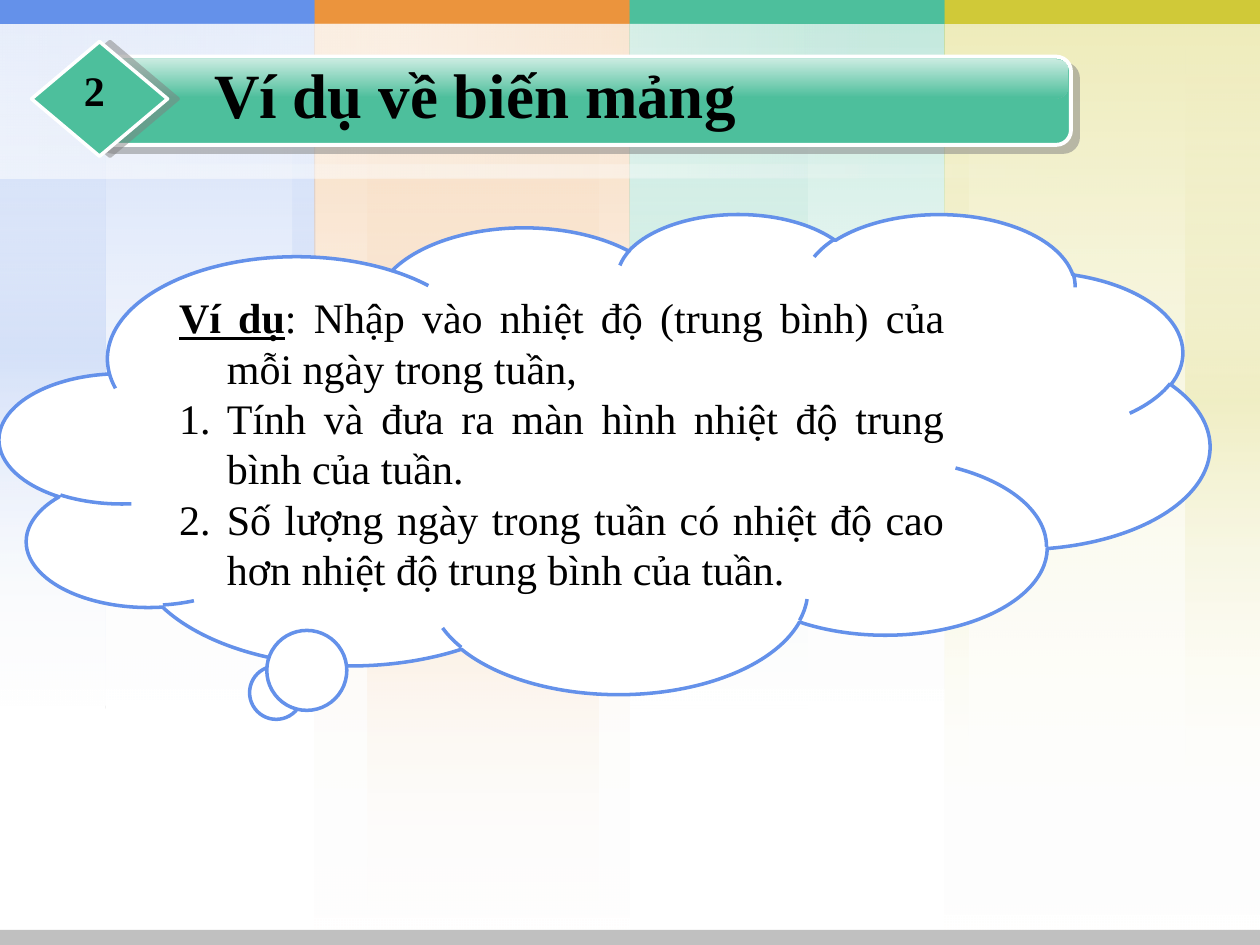
from lxml import etree
from pptx import Presentation
from pptx import util as u
from pptx.dml.color import RGBColor
from pptx.enum import shapes, text
from pptx.oxml import parse_xml
from pptx.oxml.ns import nsdecls, qn

WIDTH, HEIGHT = 10, 7.5
COLUMN = WIDTH / 4
FONT = "Times New Roman"
BLUE = RGBColor(0x64, 0x91, 0xEA)
ORANGE = RGBColor(0xEB, 0x94, 0x3D)
GREEN = RGBColor(0x4D, 0xBF, 0x9C)
YELLOW = RGBColor(0xD0, 0xC9, 0x38)
WHITE = RGBColor(0xFF, 0xFF, 0xFF)
BLACK = RGBColor(0, 0, 0)
SILVER = RGBColor(0xC0, 0xC0, 0xC0)
GREY = RGBColor(0x80, 0x80, 0x80)
SHAPE = shapes.MSO_SHAPE

# colour, panel height, strip height, strips as (offset in column, width)
COLUMNS = [
    (BLUE, 5.62, 5.62, [(2.32, 0.18), (0, 0.84)]),
    (ORANGE, 7.5, 7.5, [(0.42, 1.83)]),
    (GREEN, 5.62, 5.62, [(0, 1.41)]),
    (YELLOW, 7.47, 6.37, [(0, 0.19), (1.91, 0.59)]),
]
TASKS = [
    "Tính và đưa ra màn hình nhiệt độ trung bình của tuần.",
    "Số lượng ngày trong tuần có nhiệt độ cao hơn nhiệt độ trung bình của tuần.",
]


def inches(*values):
    return [u.Inches(value) for value in values]


def add_shape(page, kind, place, fill=None, line=None, line_width=2):
    shape = page.shapes.add_shape(kind, *inches(*place))
    shape.shadow.inherit = False
    if fill is not None:
        shape.fill.solid()
        shape.fill.fore_color.rgb = fill
    if line is None:
        shape.line.fill.background()
    else:
        shape.line.color.rgb = line
        shape.line.width = u.Pt(line_width)
    return shape


def set_gradient(shape, stops):
    """Fill from top to bottom; each stop is (position, colour, opacity) in percent."""
    marks = "".join(
        f'<a:gs pos="{position * 1000}"><a:srgbClr val="{colour}">'
        f'<a:alpha val="{opacity * 1000}"/></a:srgbClr></a:gs>'
        for position, colour, opacity in stops)
    gradient = parse_xml(
        f'<a:gradFill {nsdecls("a")} rotWithShape="1"><a:gsLst>{marks}</a:gsLst>'
        '<a:lin ang="5400000" scaled="0"/></a:gradFill>')
    shape._element.spPr.find(qn("a:prstGeom")).addnext(gradient)


def add_fade(page, place, colour, opacity, strip=False, rotation=0):
    """Add a panel that fades out downwards, or a strip that is strongest halfway."""
    panel = add_shape(page, SHAPE.RECTANGLE, place)
    panel.rotation = rotation
    if strip:
        stops = [(0, WHITE, 0), (50, colour, opacity), (100, WHITE, 0)]
    else:
        stops = [(0, colour, opacity), (100, WHITE, 0)]
    set_gradient(panel, stops)


def fill_shadow(effects, colour, distance, angle):
    shadow = etree.SubElement(effects, qn("a:outerShdw"), dist=str(u.Pt(distance)),
                              dir=str(angle * 60000), algn="ctr", rotWithShape="0")
    tint = etree.SubElement(shadow, qn("a:srgbClr"), val=str(colour))
    etree.SubElement(tint, qn("a:alpha"), val="50000")


def set_shadow(shape, distance, angle):
    fill_shadow(shape._element.spPr.find(qn("a:effectLst")), GREY, distance, angle)


def add_span(para, wording, size, bold=False, underline=False):
    span = para.add_run()
    span.text = wording
    font = span.font
    font.name, font.size, font.bold, font.underline = FONT, u.Pt(size), bold, underline
    font.color.rgb = BLACK
    return span


def add_background(page):
    for index, (colour, height, strip_height, strips) in enumerate(COLUMNS):
        left = index * COLUMN
        panel = (left, 0, COLUMN, height)
        add_fade(page, panel, colour, 20)
        for offset, width in strips:
            add_fade(page, (left + offset, 0, width, strip_height), colour, 20, strip=True)
        add_fade(page, panel, colour, 20)
        add_shape(page, SHAPE.RECTANGLE, (left, 0, COLUMN, 0.19), colour)
    glow = (3.15, -2.95, 1.22, 7.51)
    for place, strip in [((4.16, -2.85, 0.1, 8.42), True), (glow, False),
                         ((3.06, -2.87, 0.29, 6.41), True), (glow, False)]:
        add_fade(page, place, WHITE, 35, strip, rotation=270)
    add_shape(page, SHAPE.RECTANGLE, (0, HEIGHT - 0.12, WIDTH, 0.12), SILVER)


def add_heading(page, number, wording):
    bar = add_shape(page, SHAPE.ROUNDED_RECTANGLE, (0.73, 0.45, 7.77, 0.7), GREEN, WHITE, 2.25)
    bar.adjustments[0] = 0.167
    set_shadow(bar, 5.7, 45)
    gloss = add_shape(page, SHAPE.ROUNDED_RECTANGLE, (0.8, 0.47, 7.68, 0.31))
    gloss.adjustments[0] = 0.315
    set_gradient(gloss, [(0, WHITE, 70), (100, GREEN, 70)])

    title = page.shapes.title
    title.left, title.top, title.width, title.height = inches(1.6, 0.39, 6.48, 0.71)
    page.shapes._spTree.append(title._element)
    frame = title.text_frame
    frame.vertical_anchor = text.MSO_ANCHOR.TOP
    frame.auto_size = text.MSO_AUTO_SIZE.NONE
    para = frame.paragraphs[0]
    para.alignment = text.PP_ALIGN.LEFT
    span = add_span(para, wording, 36, bold=True)
    effects = etree.Element(qn("a:effectLst"))
    fill_shadow(effects, BLACK, 2, 45)
    span.font._element.find(qn("a:solidFill")).addnext(effects)

    diamond = add_shape(page, SHAPE.DIAMOND, (0.25, 0.33, 1.08, 0.91), GREEN, WHITE)
    set_shadow(diamond, 6, 0)
    box = page.shapes.add_textbox(*inches(0.47, 0.46, 0.56, 0.5))
    box.text_frame.word_wrap = True
    para = box.text_frame.paragraphs[0]
    para.alignment = text.PP_ALIGN.CENTER
    add_span(para, number, 24, bold=True)


def hang(para, numbered=False):
    para.alignment = text.PP_ALIGN.JUSTIFY
    props = para._p.get_or_add_pPr()
    props.set("marL", str(u.Inches(0.38)))
    props.set("indent", str(-u.Inches(0.38)))
    if numbered:
        etree.SubElement(props, qn("a:buFont"), typeface=FONT)
        etree.SubElement(props, qn("a:buAutoNum"), type="arabicPeriod")


def add_example(page):
    cloud = add_shape(page, SHAPE.CLOUD_CALLOUT, (0, 1.69, 9.6, 3.81), WHITE, BLUE)
    cloud.adjustments[0], cloud.adjustments[1] = -0.279, 0.513
    frame = cloud.text_frame
    frame.word_wrap = True
    frame.vertical_anchor = text.MSO_ANCHOR.TOP
    para = frame.paragraphs[0]
    hang(para)
    add_span(para, "Ví dụ", 24, bold=True, underline=True)
    add_span(para, ": Nhập vào nhiệt độ (trung bình) của mỗi ngày trong tuần,", 24)
    for task in TASKS:
        para = frame.add_paragraph()
        hang(para, numbered=True)
        add_span(para, task, 24)


def main():
    deck = Presentation()
    deck.slide_width, deck.slide_height = inches(WIDTH, HEIGHT)
    page = deck.slides.add_slide(deck.slide_layouts[5])
    add_background(page)
    add_heading(page, "2", "Ví dụ về biến mảng")
    add_example(page)
    deck.save("out.pptx")


if __name__ == "__main__":
    main()
